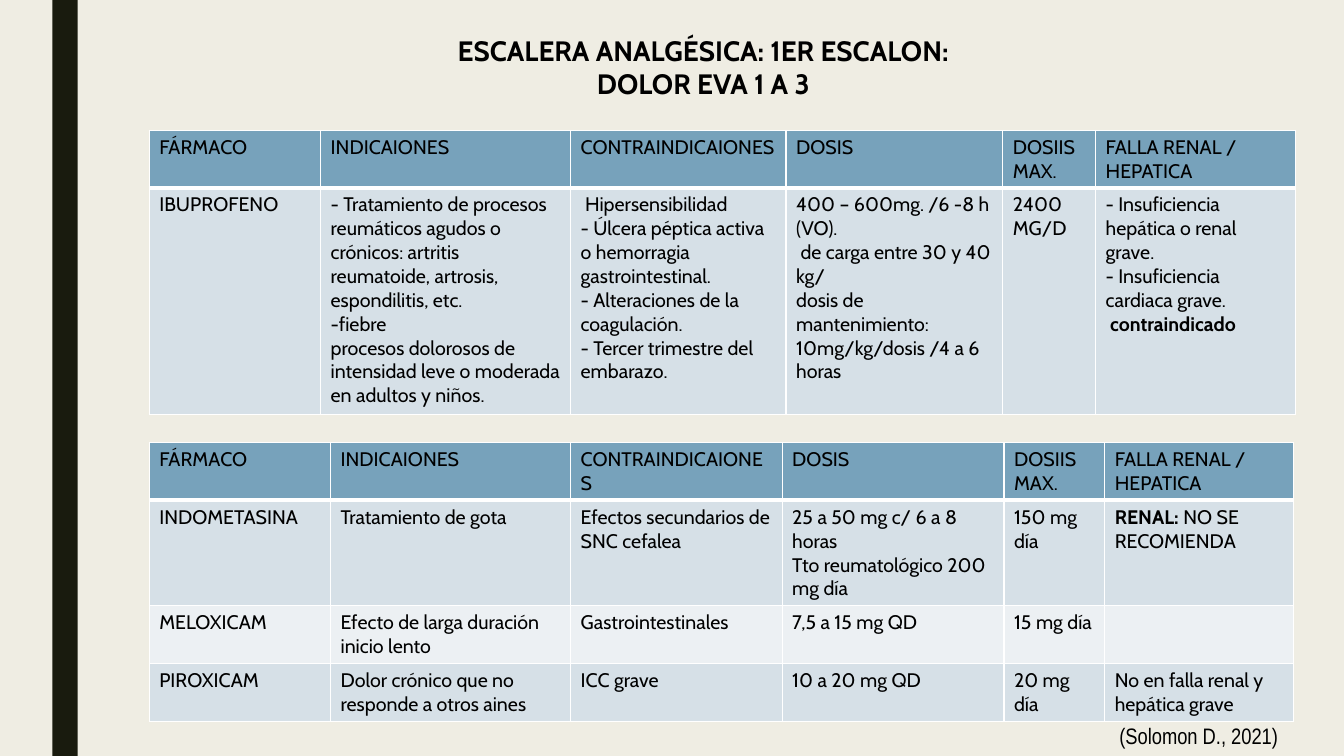
from lxml import etree
from pptx import Presentation
from pptx.dml.color import RGBColor
from pptx.enum.shapes import MSO_SHAPE
from pptx.enum.text import MSO_AUTO_SIZE, PP_ALIGN
from pptx.oxml.ns import qn
from pptx.util import Cm, Pt

RECTANGLE = MSO_SHAPE.RECTANGLE
GROW = MSO_AUTO_SIZE.SHAPE_TO_FIT_TEXT
CENTER, RIGHT = PP_ALIGN.CENTER, PP_ALIGN.RIGHT

CREAM = RGBColor(0xEF, 0xED, 0xE3)
DARK = RGBColor(0x19, 0x1B, 0x0E)
BLACK = RGBColor(0x00, 0x00, 0x00)
WHITE = RGBColor(0xFF, 0xFF, 0xFF)
HEADER = RGBColor(0x77, 0xA2, 0xBB)
BANDS = (RGBColor(0xD6, 0xE0, 0xE7), RGBColor(0xEC, 0xF0, 0xF3))

HEADINGS = ["FÁRMACO", "INDICAIONES", "CONTRAINDICAIONES", "DOSIS",
            "DOSIIS MAX.", "FALLA RENAL / HEPATICA"]
IBUPROFEN = [[
    "IBUPROFENO",
    "- Tratamiento de procesos reumáticos agudos o crónicos: artritis "
    "reumatoide, artrosis, espondilitis, etc.\n-fiebre\n"
    "procesos dolorosos de intensidad leve o moderada en adultos y niños.",
    " Hipersensibilidad\n"
    "- Úlcera péptica activa o hemorragia gastrointestinal.\n"
    "- Alteraciones de la coagulación.\n- Tercer trimestre del embarazo.",
    "400 – 600mg. /6 -8 h (VO).\n de carga entre 30 y 40 kg/\n"
    "dosis de mantenimiento: 10mg/kg/dosis /4 a 6 horas",
    "2400 MG/D",
    "- Insuficiencia hepática o renal grave.\n"
    "- Insuficiencia cardiaca grave.\n **contraindicado**",
]]
OTHER_DRUGS = [
    ["INDOMETASINA", "Tratamiento de gota", "Efectos secundarios de SNC cefalea",
     "25 a 50 mg c/ 6 a 8 horas\nTto reumatológico 200 mg día", "150 mg día",
     "**RENAL: **NO SE RECOMIENDA"],
    ["MELOXICAM", "Efecto de larga duración inicio lento", "Gastrointestinales",
     "7,5 a 15 mg QD", "15 mg día", ""],
    ["PIROXICAM", "Dolor crónico que no responde a otros aines", "ICC grave",
     "10 a 20 mg QD", "20 mg día", "No en falla renal y hepática grave"],
]


def write_text(frame, text, size, font, alignment=None):
    """Write one paragraph per line, with bold runs between double asterisks."""
    for index, line in enumerate(text.split("\n")):
        paragraph = frame.add_paragraph() if index else frame.paragraphs[0]
        paragraph.alignment = alignment
        for position, part in enumerate(line.split("**")):
            if part:
                run = paragraph.add_run()
                run.text = part
                run.font.size = Pt(size)
                run.font.name = font
                run.font.bold = position % 2 == 1
                run.font.color.rgb = BLACK


def add_text(slide, box, text, size, font, alignment):
    """Add a wrapping text box that grows with its text."""
    frame = slide.shapes.add_textbox(*map(Cm, box)).text_frame
    frame.word_wrap = True
    frame.auto_size = GROW
    write_text(frame, text, size, font, alignment)


def set_borders(cell, bottom_width):
    """Draw white lines on the four sides of a cell."""
    properties = cell._tc.get_or_add_tcPr()
    widths = {"a:lnL": 1, "a:lnR": 1, "a:lnT": 1, "a:lnB": bottom_width}
    for index, (side, width) in enumerate(widths.items()):
        line = etree.Element(qn(side), w=str(Pt(width)))
        fill = etree.SubElement(line, qn("a:solidFill"))
        etree.SubElement(fill, qn("a:srgbClr"), val=str(WHITE))
        properties.insert(index, line)


def add_drug_table(slide, top, widths, heights, drugs):
    """Add a table of drugs under the shared headings."""
    rows = [HEADINGS] + drugs
    table = slide.shapes.add_table(
        len(rows), len(HEADINGS), Cm(3.76), Cm(top),
        Cm(sum(widths)), Cm(sum(heights))).table
    for column, width in zip(table.columns, widths):
        column.width = Cm(width)
    for index, (row, height, texts) in enumerate(zip(table.rows, heights, rows)):
        row.height = Cm(height)
        for cell, text in zip(row.cells, texts):
            cell.fill.solid()
            cell.fill.fore_color.rgb = BANDS[(index - 1) % 2] if index else HEADER
            set_borders(cell, 1 if index else 3)
            write_text(cell.text_frame, text, 14, "Cabin")


def add_side_bar(slide):
    """Add the dark bar at the left."""
    bar = slide.shapes.add_shape(RECTANGLE, Cm(1.32), Cm(0), Cm(0.64), Cm(19.05))
    bar.shadow.inherit = False
    bar.fill.solid()
    bar.fill.fore_color.rgb = DARK
    bar.line.fill.background()


def main():
    """Build and save the slide."""
    presentation = Presentation()
    presentation.slide_width, presentation.slide_height = Cm(33.87), Cm(19.05)
    slide = presentation.slides.add_slide(presentation.slide_layouts[6])
    slide.background.fill.solid()
    slide.background.fill.fore_color.rgb = CREAM
    add_side_bar(slide)
    add_drug_table(slide, 11.15, [4.57, 6.05, 5.33, 5.59, 2.54, 4.75],
                   [1.45, 2.65, 1.45, 1.45], OTHER_DRUGS)
    add_drug_table(slide, 3.28, [4.32, 6.3, 5.43, 5.46, 2.34, 5.03],
                   [1.45, 5.7], IBUPROFEN)
    add_text(slide, (3.81, 0.71, 27.99, 2.82),
             "**ESCALERA ANALGÉSICA: 1ER ESCALON: **\n**DOLOR EVA 1 A 3 **",
             20, "Cabin", CENTER)
    add_text(slide, (24.13, 18.08, 8.46, 0.94), "(Solomon D., 2021) ",
             16, "Arial Narrow", RIGHT)
    presentation.save("out.pptx")


if __name__ == "__main__":
    main()
